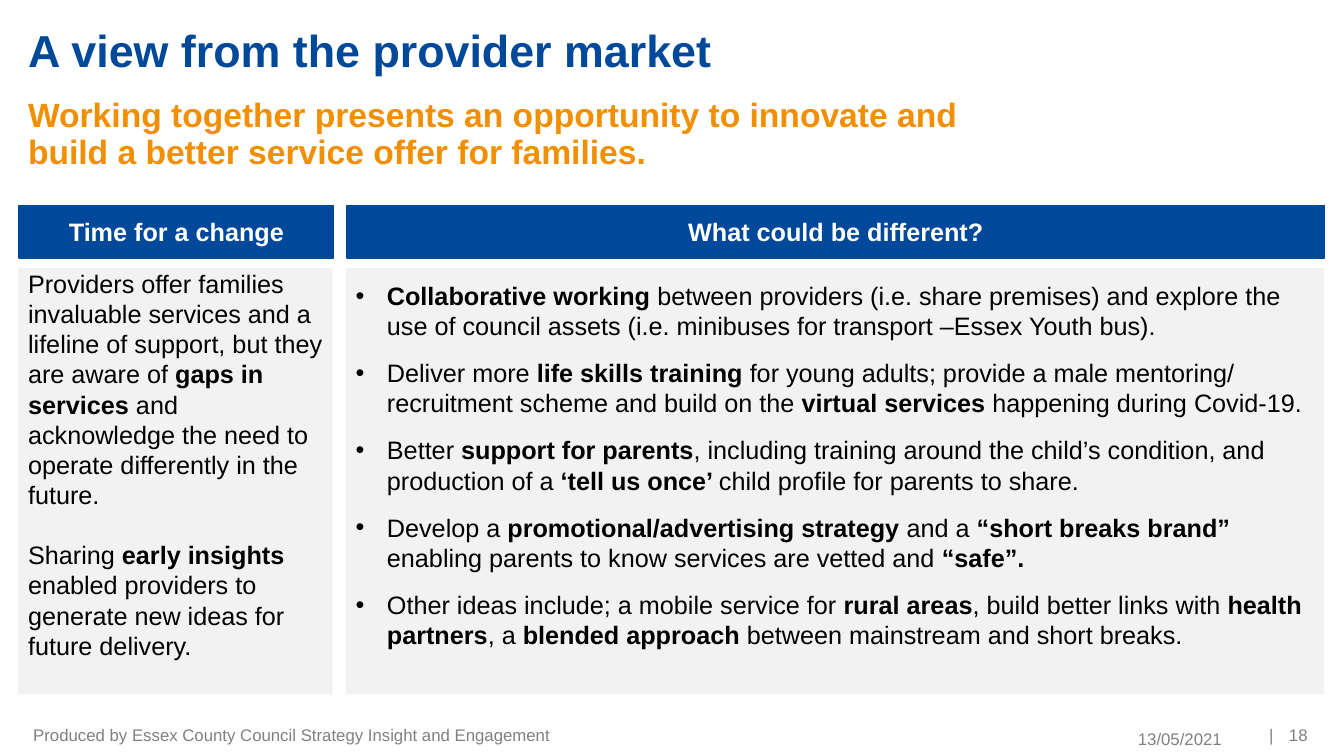
from dataclasses import dataclass

from lxml.etree import SubElement
from pptx import Presentation
from pptx.dml.color import RGBColor
from pptx.enum.shapes import MSO_SHAPE as Preset
from pptx.enum.text import MSO_ANCHOR as Anchor, MSO_AUTO_SIZE as Fit, PP_ALIGN as Align
from pptx.oxml.ns import qn
from pptx.util import Inches, Pt

BLUE = RGBColor(0x00, 0x48, 0x99)
ORANGE = RGBColor(0xF2, 0x8F, 0x00)
PALE = RGBColor(0xF2, 0xF2, 0xF2)
GREY = RGBColor(0x80, 0x80, 0x80)
WHITE = RGBColor(0xFF, 0xFF, 0xFF)
BLACK = RGBColor(0x00, 0x00, 0x00)

FONT = "Arial"
HEAD_TOP, HEAD_HIGH = 2.04, 0.52
BODY_TOP, BODY_HIGH = 2.66, 4.23
HANG = 0.31


@dataclass(frozen=True)
class Box:
    left: float
    top: float
    width: float
    height: float

    def lengths(self) -> tuple:
        return tuple(map(Inches, (self.left, self.top, self.width, self.height)))


@dataclass(frozen=True)
class Style:
    size: int
    color: RGBColor
    bold: bool = False
    align: Align = Align.LEFT
    anchor: Anchor = Anchor.MIDDLE
    insets: tuple = (0.1, 0.05, 0.1, 0.05)
    after: int = 0
    spacing: float = 1.0
    bullet: bool = False


@dataclass(frozen=True)
class Column:
    head: str
    head_left: float
    body_left: float
    width: float
    lines: tuple
    style: Style


@dataclass(frozen=True)
class Footer:
    text: str
    box: Box
    align: Align


COLUMNS = (
    Column(
        "Time for a change", 0.19, 0.18, 3.12,
        (
            "Providers offer families invaluable services and a lifeline of support, "
            "but they are aware of *gaps in services *and acknowledge the need to "
            "operate differently in the future.",
            "Sharing *early insights *enabled providers to generate new ideas for "
            "future delivery.",
        ),
        Style(18, BLACK, anchor=Anchor.TOP, insets=(0.1, 0, 0.1, 0), after=21),
    ),
    Column(
        "What could be different?", 3.44, 3.43, 9.7,
        (
            "*Collaborative working *between providers (i.e. share premises) and explore "
            "the use of council assets (i.e. minibuses for transport –Essex Youth bus).",
            "Deliver more *life skills training *for young adults; provide a male "
            "mentoring/ recruitment scheme and build on the *virtual services "
            "*happening during Covid-19.",
            "Better *support for parents*, including training around the child’s "
            "condition, and production of a *‘tell us once’ *child profile for "
            "parents to share.",
            "Develop a *promotional/advertising strategy *and a *“short breaks brand” "
            "*enabling parents to know services are vetted and *“safe”.*",
            "Other ideas include; a mobile service for *rural areas*, build better links "
            "with *health partners*, a *blended approach *between mainstream and "
            "short breaks.",
        ),
        Style(18, BLACK, anchor=Anchor.TOP, insets=(0.1, 0.12, 0.1, 0), after=12,
              bullet=True),
    ),
)

FOOTERS = (
    Footer("Produced by Essex County Council Strategy Insight and Engagement",
           Box(0.33, 7.21, 6.3, 0.15), Align.LEFT),
    Footer("13/05/2021", Box(9.72, 7.25, 2.4, 0.15), Align.RIGHT),
    Footer("|", Box(12.12, 7.21, 0.51, 0.15), Align.RIGHT),
    Footer("18", Box(12.63, 7.21, 0.34, 0.15), Align.RIGHT),
)


def add_bullet(para) -> None:
    props = para._p.get_or_add_pPr()
    props.set("marL", str(Inches(HANG)))
    props.set("indent", str(-Inches(HANG)))
    SubElement(props, qn("a:buFont"), typeface=FONT)
    SubElement(props, qn("a:buChar"), char="•")


def write(shape, lines: tuple, style: Style) -> None:
    frame = shape.text_frame
    frame.word_wrap = True
    frame.auto_size = Fit.NONE
    frame.vertical_anchor = style.anchor
    (frame.margin_left, frame.margin_top,
     frame.margin_right, frame.margin_bottom) = map(Inches, style.insets)
    for index, line in enumerate(lines):
        para = frame.add_paragraph() if index else frame.paragraphs[0]
        para.alignment = style.align
        para.line_spacing = style.spacing
        para.space_before = Pt(0)
        para.space_after = Pt(style.after)
        if style.bullet:
            add_bullet(para)
        for part, text in enumerate(line.split("*")):
            if not text:
                continue
            run = para.add_run()
            run.text = text
            font = run.font
            font.name = FONT
            font.size = Pt(style.size)
            font.bold = style.bold or part % 2 == 1
            font.color.rgb = style.color


def add_panel(slide, box: Box, fill: RGBColor, lines: tuple, style: Style):
    panel = slide.shapes.add_shape(Preset.RECTANGLE, *box.lengths())
    panel.shadow.inherit = False
    panel.fill.solid()
    panel.fill.fore_color.rgb = fill
    panel.line.fill.background()
    write(panel, lines, style)
    return panel


def add_label(slide, text: str, box: Box, style: Style) -> None:
    write(slide.shapes.add_textbox(*box.lengths()), (text,), style)


def add_column(slide, col: Column) -> None:
    head = add_panel(slide, Box(col.head_left, HEAD_TOP, col.width, HEAD_HIGH),
                     BLUE, (col.head,), Style(18, WHITE, True, Align.CENTER))
    head.line.color.rgb = BLUE
    head.line.width = Pt(1)
    add_panel(slide, Box(col.body_left, BODY_TOP, col.width, BODY_HIGH),
              PALE, col.lines, col.style)


def main() -> None:
    deck = Presentation()
    deck.slide_width, deck.slide_height = Inches(13.33), Inches(7.5)
    slide = deck.slides.add_slide(deck.slide_layouts.get_by_name("Title Only"))

    title = slide.shapes.title
    title.left, title.top, title.width, title.height = Box(0.18, -0.05, 11.4, 1.03).lengths()
    write(title, ("A view from the provider market",),
          Style(32, BLUE, True, insets=(0.1, 0.05, 0.1, 0)))
    add_label(slide, "Working together presents an opportunity to innovate and "
              "build a better service offer for families.", Box(0.18, 0.93, 9.7, 0.89),
              Style(24, ORANGE, True, anchor=Anchor.TOP, spacing=0.9))

    for col in COLUMNS:
        add_column(slide, col)
    for foot in FOOTERS:
        add_label(slide, foot.text, foot.box,
                  Style(12, GREY, align=foot.align, insets=(0, 0.05, 0, 0.05)))

    deck.save("out.pptx")


if __name__ == "__main__":
    main()
